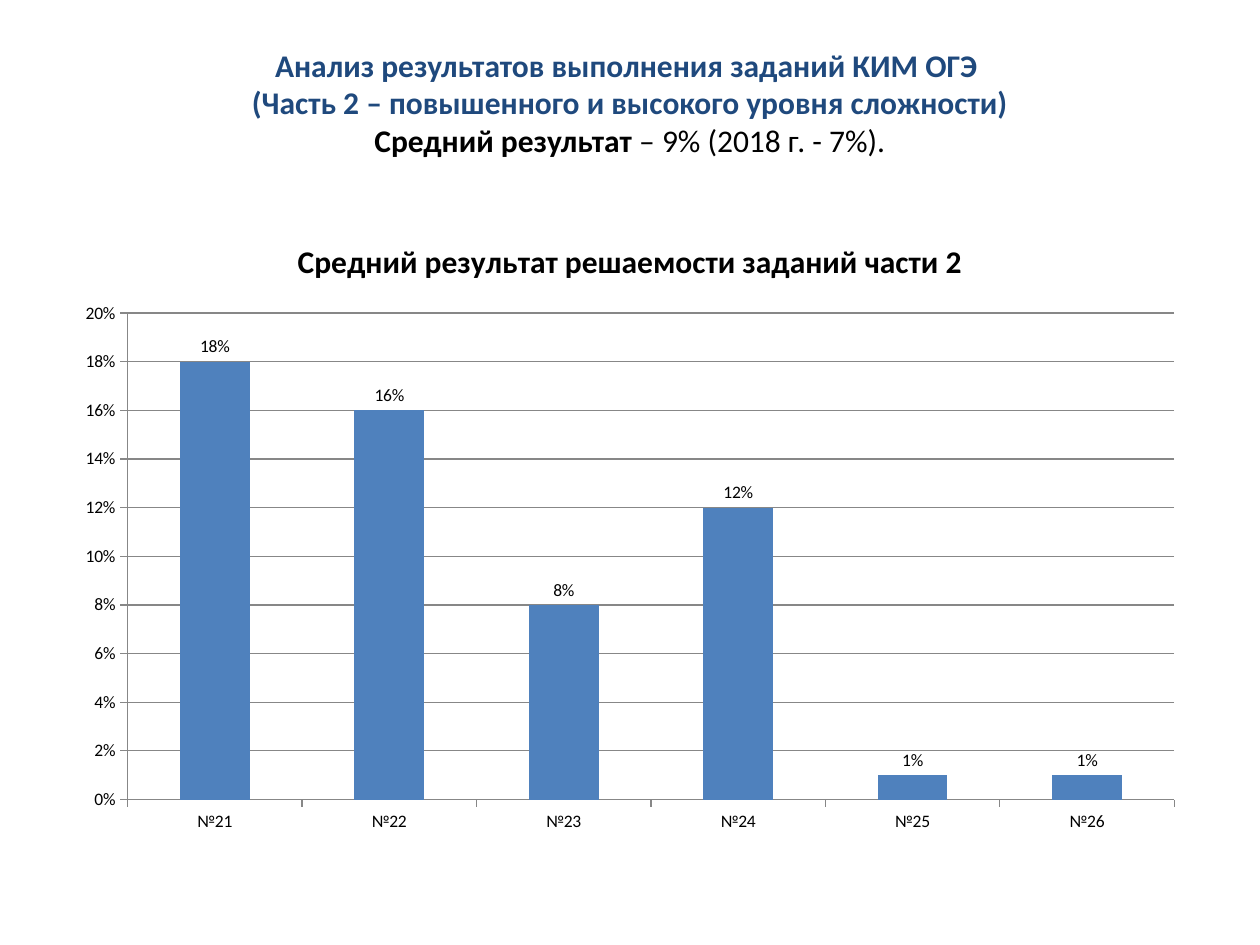
import pptx
import pptx.chart.data
import pptx.dml.color
import pptx.enum.chart
import pptx.enum.text
import pptx.util

Cm = pptx.util.Cm
COLOURS = {"heading": "1F497D", "text": "000000", "bar": "4F81BD", "axis": "878787"}
RESULTS = {"№21": 0.18, "№22": 0.16, "№23": 0.08,
           "№24": 0.12, "№25": 0.01, "№26": 0.01}
HEADING_LINES = [
    [("Анализ результатов выполнения заданий КИМ ОГЭ ", "heading", True)],
    [("(Часть 2 – повышенного и высокого уровня сложности)", "heading", True)],
    [("Средний результат ", "text", True), ("– 9% (2018 г. - 7%).", "text", False)],
]


def rgb(name):
    return pptx.dml.color.RGBColor.from_string(COLOURS[name])


def apply_format(target, values):
    for name, value in values.items():
        setattr(target, name, value)


class SlideBuilder:
    def __init__(self, slide, font="Calibri"):
        self.slide = slide
        self.font = font

    def style(self, font, size, colour="text", bold=False):
        apply_format(font, {"name": self.font, "size": pptx.util.Pt(size), "bold": bold})
        font.color.rgb = rgb(colour)

    def heading(self, lines, left, top, width, height):
        frame = self.slide.shapes.add_textbox(left, top, width, height).text_frame
        apply_format(frame, {
            "word_wrap": True,
            "vertical_anchor": pptx.enum.text.MSO_ANCHOR.MIDDLE,
            "margin_top": Cm(0.13),
            "margin_bottom": Cm(0.87),
        })
        paragraph = frame.paragraphs[0]
        paragraph.alignment = pptx.enum.text.PP_ALIGN.CENTER
        for number, line in enumerate(lines):
            if number:
                paragraph.add_line_break()
            for text, colour, bold in line:
                run = paragraph.add_run()
                run.text = text
                self.style(run.font, 18, colour, bold)

    def percent_columns(self, title, results, left, top, width, height):
        data = pptx.chart.data.CategoryChartData(number_format="0%")
        data.categories = list(results)
        data.add_series("Series 1", list(results.values()))
        chart = self.slide.shapes.add_chart(
            pptx.enum.chart.XL_CHART_TYPE.COLUMN_CLUSTERED,
            left, top, width, height, data).chart
        chart.has_legend = False
        self.style(chart.font, 10)

        chart.has_title = True
        caption = chart.chart_title.text_frame.paragraphs[0].add_run()
        caption.text = title
        self.style(caption.font, 18, bold=True)
        chart.chart_title.include_in_layout = False

        for axis in (chart.category_axis, chart.value_axis):
            axis.major_tick_mark = pptx.enum.chart.XL_TICK_MARK.OUTSIDE
            axis.format.line.color.rgb = rgb("axis")
        apply_format(chart.value_axis, {
            "minimum_scale": 0, "maximum_scale": 0.2, "major_unit": 0.02,
            "has_major_gridlines": True,
        })
        chart.value_axis.major_gridlines.format.line.color.rgb = rgb("axis")
        apply_format(chart.value_axis.tick_labels,
                     {"number_format": "0%", "number_format_is_linked": False})

        plot = chart.plots[0]
        apply_format(plot, {"gap_width": 150, "vary_by_categories": False,
                            "has_data_labels": True})
        apply_format(plot.data_labels, {
            "show_value": True,
            "number_format": "0%",
            "number_format_is_linked": False,
            "position": pptx.enum.chart.XL_LABEL_POSITION.OUTSIDE_END,
        })
        self.style(plot.data_labels.font, 10)
        columns = plot.series[0].format.fill
        columns.solid()
        columns.fore_color.rgb = rgb("bar")


def main():
    deck = pptx.Presentation()
    deck.slide_width, deck.slide_height = Cm(25.4), Cm(19.05)
    builder = SlideBuilder(deck.slides.add_slide(deck.slide_layouts[6]))
    builder.heading(HEADING_LINES, Cm(1.27), Cm(0.76), Cm(22.86), Cm(3.35))
    builder.percent_columns("Средний результат решаемости заданий части 2", RESULTS,
                            Cm(1.27), Cm(4.32), Cm(22.86), Cm(12.7))
    deck.save("out.pptx")


if __name__ == "__main__":
    main()
